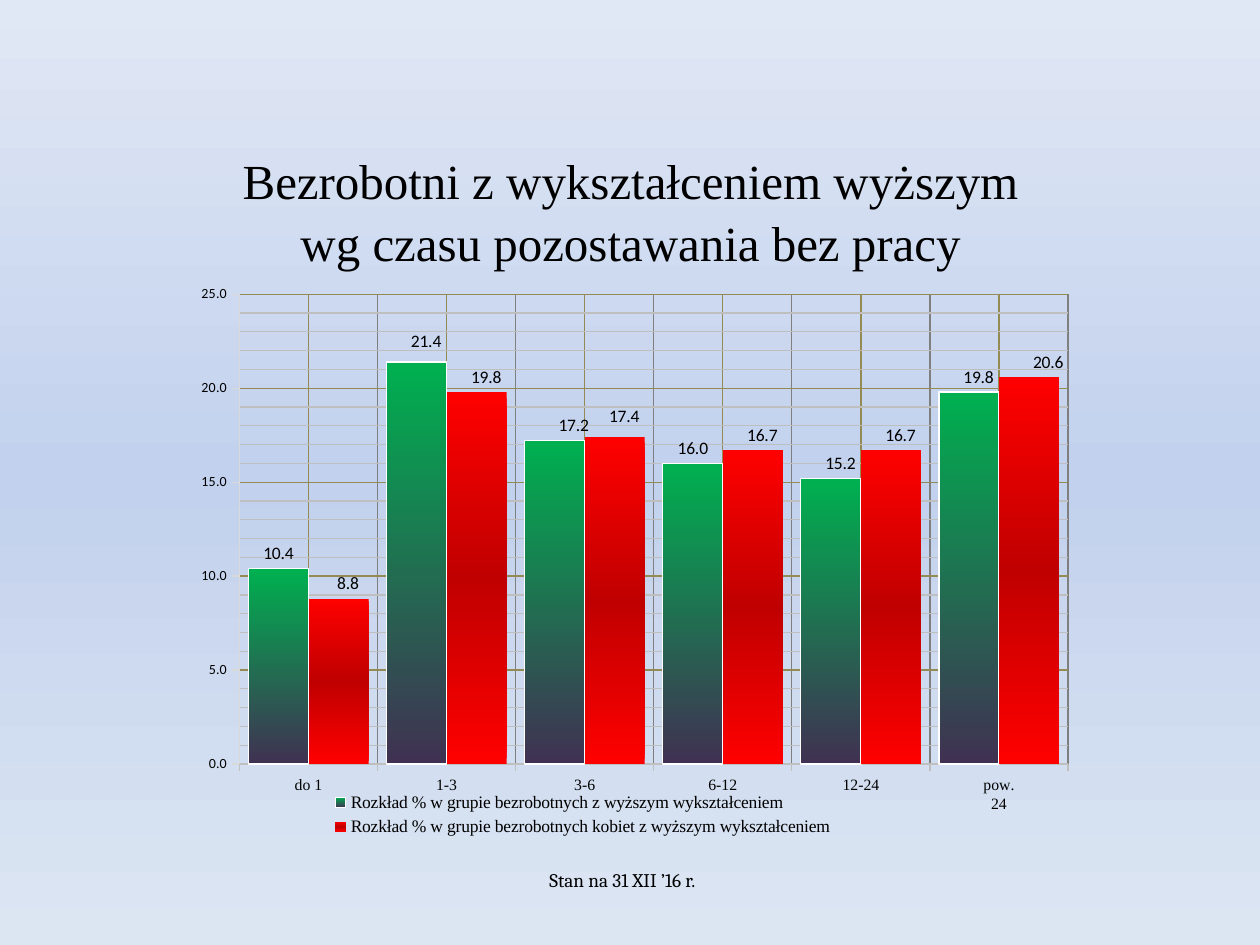
import pptx
import pptx.chart.data
import pptx.dml.color
import pptx.enum.chart
import pptx.enum.text
import pptx.oxml
import pptx.oxml.ns
import pptx.util
from lxml import etree

Inches, Pt = pptx.util.Inches, pptx.util.Pt
qn = pptx.oxml.ns.qn

TITLE = ["Bezrobotni z wykształceniem wyższym",
         "wg czasu pozostawania bez pracy"]
DATE_NOTE = ["Stan na 31 XII ’16 r."]
MONTHS = ["do 1", "1-3", "3-6", "6-12", "12-24", "pow.\n24"]

# label_shifts: point index -> (x, y) as fractions of the chart size
GROUPS = [
    {"name": "Rozkład % w grupie bezrobotnych z wyższym wykształceniem",
     "shares": [10.4, 21.4, 17.2, 16.0, 15.2, 19.8],
     "fill": [(0, "00B050"), (100, "403152")],
     "outline": "FFFFFF",
     "label_shifts": {1: (0.01, -0.01), 2: (0.02, 0), 4: (0.01, 0),
                      5: (0.01, 0)}},
    {"name": "Rozkład % w grupie bezrobotnych kobiet z wyższym wykształceniem",
     "shares": [8.8, 19.8, 17.4, 16.7, 16.7, 20.6],
     "fill": [(0, "FF0000"), (50, "C00000"), (100, "FF0000")],
     "outline": None,
     "label_shifts": {0: (0.01, 0), 1: (0.01, 0), 2: (0.01, -0.01),
                      3: (0.01, 0), 4: (0.01, 0), 5: (0.02, 0)}},
]

THEME = {
    "background": [(0, "DCE6F2"), (50, "C2D1ED"), (100, "E1E8F5")],
    "text": "000000",
    "title": ("Times New Roman", 28),
    "note": ("Cambria", 11),
    "labels": ("Calibri", 10),
    "months": ("Times New Roman", 9),
    "scale": ("Calibri", 8),
    "legend": ("Times New Roman", 10),
    "grid": "948A54",
    "month_grid": "7F7F7F",
    "minor_grid": "BFBFBF",
    "month_axis": "BFBFBF",
    "scale_axis": "D9D9D9",
}

TITLE_BOX = (0.2, 1.23, 9.61, 0.87)
CHART_BOX = (1.22, 2.1, 7.56, 4.72)
NOTE_BOX = (0.43, 6.82, 9.02, 0.33)
PLOT_AREA = (0.09, 0.05, 0.87, 0.79)
LEGEND_AREA = (0.15, 0.88, 0.6, 0.09)


def rgb(color):
    return pptx.dml.color.RGBColor.from_string(color)


def set_font(font, style):
    font.name, size = THEME[style]
    font.size = Pt(size)
    font.bold = False
    font.color.rgb = rgb(THEME["text"])


def set_line(line, color):
    line.color.rgb = rgb(color)
    line.width = Pt(0.75)


def set_gradient(fill, owner, stops, angle):
    """Fill with any number of stops; the angle runs counter-clockwise."""
    fill.gradient()
    fill.gradient_angle = angle
    stop_list = next(owner.iter(qn("a:gsLst")))
    for stop in list(stop_list):
        stop_list.remove(stop)
    for position, color in stops:
        stop = etree.SubElement(stop_list, qn("a:gs"), pos=str(position * 1000))
        etree.SubElement(stop, qn("a:srgbClr"), val=color)


def manual_layout(x, y, width=None, height=None, inner=False):
    layout = pptx.oxml.parse_xml(f"<c:layout {pptx.oxml.ns.nsdecls('c')}/>")
    manual = etree.SubElement(layout, qn("c:manualLayout"))
    parts = []
    if inner:
        parts.append(("layoutTarget", "inner"))
    if width is not None:
        parts += [("xMode", "edge"), ("yMode", "edge")]
    parts += [("x", x), ("y", y)]
    if width is not None:
        parts += [("w", width), ("h", height)]
    for tag, value in parts:
        etree.SubElement(manual, qn(f"c:{tag}"), val=str(value))
    return layout


def write_centred(frame, lines, style):
    frame.word_wrap = True
    frame.auto_size = pptx.enum.text.MSO_AUTO_SIZE.NONE
    frame.vertical_anchor = pptx.enum.text.MSO_ANCHOR.MIDDLE
    for i, line in enumerate(lines):
        paragraph = frame.add_paragraph() if i else frame.paragraphs[0]
        paragraph.alignment = pptx.enum.text.PP_ALIGN.CENTER
        run = paragraph.add_run()
        run.text = line
        set_font(run.font, style)


def style_axis(axis, style, line, major, minor):
    axis.major_tick_mark = pptx.enum.chart.XL_TICK_MARK.OUTSIDE
    axis.minor_tick_mark = pptx.enum.chart.XL_TICK_MARK.NONE
    axis.has_major_gridlines = axis.has_minor_gridlines = True
    set_line(axis.major_gridlines.format.line, major)
    # python-pptx has no object for minor gridlines, so the major ones are used
    minor_lines = axis._element.find(qn("c:minorGridlines"))
    minor_lines.append(pptx.oxml.parse_xml(
        f'<c:spPr {pptx.oxml.ns.nsdecls("c", "a")}><a:ln w="9525"><a:solidFill>'
        f'<a:srgbClr val="{minor}"/></a:solidFill></a:ln></c:spPr>'))
    set_line(axis.format.line, line)
    set_font(axis.tick_labels.font, style)


def style_series(series, group):
    outside = pptx.enum.chart.XL_LABEL_POSITION.OUTSIDE_END
    set_gradient(series.format.fill, series._element, group["fill"], 270)
    if group["outline"]:
        set_line(series.format.line, group["outline"])
    else:
        series.format.line.fill.background()
    series.invert_if_negative = False
    labels = series.data_labels
    labels.show_value = True
    labels.number_format = "0.0"
    labels.number_format_is_linked = False
    labels.position = outside
    set_font(labels.font, "labels")
    for index, shift in group["label_shifts"].items():
        label = series.points[index].data_label
        label.position = outside
        set_font(label.font, "labels")
        label._dLbl.insert(1, manual_layout(*shift))


def add_share_chart(slide):
    data = pptx.chart.data.CategoryChartData(number_format="0.0")
    data.categories = MONTHS
    for group in GROUPS:
        data.add_series(group["name"], group["shares"])
    chart = slide.shapes.add_chart(
        pptx.enum.chart.XL_CHART_TYPE.COLUMN_CLUSTERED,
        *map(Inches, CHART_BOX), data).chart
    set_font(chart.font, "labels")
    chart.has_title = False

    plot = chart.plots[0]
    plot.gap_width, plot.overlap = 30, 0
    plot.vary_by_categories = False
    for series, group in zip(plot.series, GROUPS):
        style_series(series, group)

    style_axis(chart.category_axis, "months", THEME["month_axis"],
               THEME["month_grid"], THEME["grid"])
    scale = chart.value_axis
    style_axis(scale, "scale", THEME["scale_axis"],
               THEME["grid"], THEME["minor_grid"])
    scale.minimum_scale, scale.maximum_scale = 0, 25
    scale.major_unit, scale.minor_unit = 5, 1
    scale.tick_labels.number_format = "0.0"
    scale.tick_labels.number_format_is_linked = False

    chart.has_legend = True
    legend = chart.legend
    legend.position = pptx.enum.chart.XL_LEGEND_POSITION.RIGHT
    legend.include_in_layout = False
    set_font(legend.font, "legend")
    for old in legend._element.findall(qn("c:layout")):
        legend._element.remove(old)
    legend._element.find(qn("c:legendPos")).addnext(manual_layout(*LEGEND_AREA))

    plot_area = chart._chartSpace.chart.plotArea
    for old in plot_area.findall(qn("c:layout")):
        plot_area.remove(old)
    plot_area.insert(0, manual_layout(*PLOT_AREA, inner=True))


def main():
    deck = pptx.Presentation()
    deck.slide_width, deck.slide_height = Inches(10), Inches(7.5)
    slide = deck.slides.add_slide(deck.slide_layouts[5])
    set_gradient(slide.background.fill, slide._element, THEME["background"], 90)

    title = slide.shapes.title
    title.left, title.top, title.width, title.height = map(Inches, TITLE_BOX)
    write_centred(title.text_frame, TITLE, "title")
    for paragraph in title.text_frame.paragraphs:
        paragraph.line_spacing = 1.05

    note = slide.shapes.add_textbox(*map(Inches, NOTE_BOX))
    write_centred(note.text_frame, DATE_NOTE, "note")
    add_share_chart(slide)
    deck.save("out.pptx")


if __name__ == "__main__":
    main()
